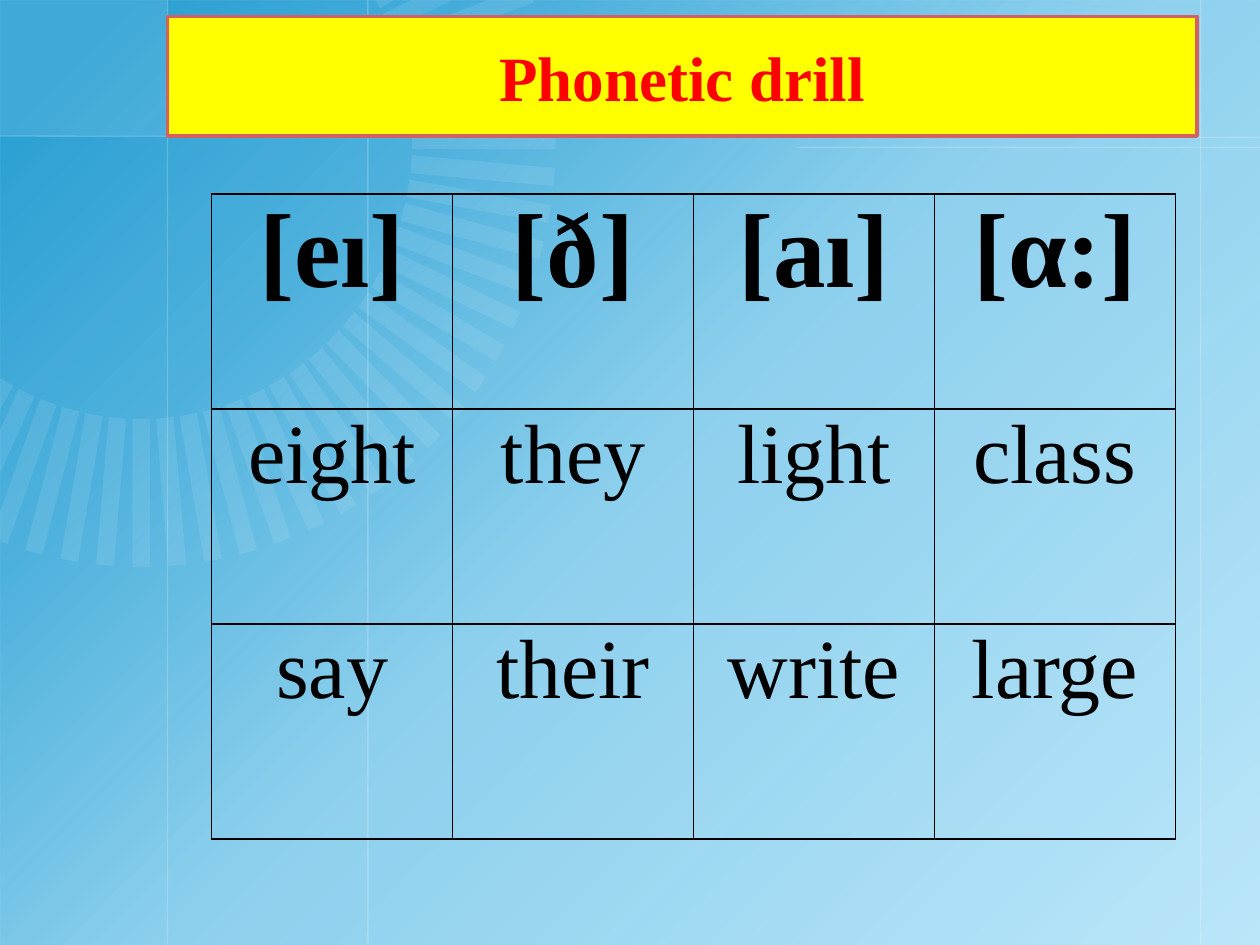
from dataclasses import dataclass
from math import cos, radians, sin

from lxml import etree
from pptx import Presentation
from pptx.dml.color import RGBColor
from pptx.enum.shapes import MSO_CONNECTOR, MSO_SHAPE
from pptx.enum.text import MSO_ANCHOR, MSO_AUTO_SIZE, PP_ALIGN
from pptx.oxml import parse_xml
from pptx.oxml.ns import nsdecls, qn
from pptx.util import Inches, Pt

STRAIGHT = MSO_CONNECTOR.STRAIGHT
RECTANGLE = MSO_SHAPE.RECTANGLE
CENTER = PP_ALIGN.CENTER
MIDDLE = MSO_ANCHOR.MIDDLE
NO_AUTOFIT = MSO_AUTO_SIZE.NONE

WIDTH, HEIGHT = 10, 7.5
FONT = "Times New Roman"
WHITE, BLACK, PALE, BLUE = "FFFFFF", "000000", "F2FAFE", "0F92CC"
GLOW_STOPS = [(6, 83), (26, 63), (50, 27), (100, 0)]  # position, opacity
ROWS = [
    ["[eı]", "[ð]", "[aı]", "[α:]"],
    ["eight", "they", "light", "class"],
    ["say", "their", "write", "large"],
]
Point = tuple[float, float]


@dataclass(frozen=True)
class GuideLine:
    start: Point
    end: Point


@dataclass(frozen=True)
class RayRing:
    """Bars fanned around a centre, slightly taller than wide."""
    center: Point
    inner: float
    outer: float
    half_width: float
    stretch: float


GUIDES = [
    *(GuideLine((x, 0), (x, HEIGHT)) for x in (1.33, 9.53, 2.92)),
    GuideLine((0, 1.08), (WIDTH, 1.09)),
    GuideLine((6.33, 1.17), (WIDTH, 1.17)),
]
RING = RayRing((1.12, 1.11), 2.15, 3.29, 0.07, 1.03)
# The title bar covers the rays between these two runs
RAY_ANGLES = [*range(-30, -19, 5), *range(0, 121, 5)]


def color(value: str) -> RGBColor:
    return RGBColor.from_string(value)


def set_format(target, values: dict) -> None:
    for name, value in values.items():
        setattr(target, name, value)


def style_span(span, size: int, bold: bool, ink: str) -> None:
    set_format(span.font, {"name": FONT, "size": Pt(size), "bold": bold})
    span.font.color.rgb = color(ink)


def set_opacity(shape, percent: int) -> None:
    for tone in shape._element.spPr.iter(qn("a:srgbClr")):
        etree.SubElement(tone, qn("a:alpha"), val=str(percent * 1000))


def style_plain(shape, fill: str, opacity: int) -> None:
    shape.shadow.inherit = False
    shape.fill.solid()
    shape.fill.fore_color.rgb = color(fill)
    shape.line.fill.background()
    set_opacity(shape, opacity)


def add_rectangle(slide, width: float, height: float):
    return slide.shapes.add_shape(
        RECTANGLE, 0, 0, Inches(width), Inches(height))


def add_glow(slide) -> None:
    glow = add_rectangle(slide, WIDTH, HEIGHT)
    glow.shadow.inherit = False
    glow.line.fill.background()
    stops = "".join(
        f'<a:gs pos="{place * 1000}"><a:srgbClr val="{BLUE}">'
        f'<a:alpha val="{opacity * 1000}"/></a:srgbClr></a:gs>'
        for place, opacity in GLOW_STOPS)
    gradient = parse_xml(
        f'<a:gradFill {nsdecls("a")} rotWithShape="1"><a:gsLst>{stops}</a:gsLst>'
        '<a:lin ang="2700000" scaled="0"/></a:gradFill>')
    glow._element.spPr.find(qn("a:prstGeom")).addnext(gradient)


def add_guide(slide, guide: GuideLine) -> None:
    ends = [Inches(value) for value in (*guide.start, *guide.end)]
    line = slide.shapes.add_connector(STRAIGHT, *ends)
    line.line.width = Pt(0.75)
    line.line.color.rgb = color(WHITE)
    etree.SubElement(line._element.spPr, qn("a:effectLst"))
    set_opacity(line, 20)


def clip_at_zero(points: list[Point], axis: int) -> list[Point]:
    """Keep the part of a polygon with no negative value on one axis."""
    kept = []
    for index, end in enumerate(points):
        start = points[index - 1]
        if (start[axis] < 0) != (end[axis] < 0):
            share = start[axis] / (start[axis] - end[axis])
            kept.append(tuple(a + share * (b - a) for a, b in zip(start, end)))
        if end[axis] >= 0:
            kept.append(end)
    return kept


def add_ray(slide, ring: RayRing, degrees: int) -> None:
    across, down = cos(radians(degrees)), sin(radians(degrees))
    corners = [(ring.inner, -1), (ring.outer, -1), (ring.outer, 1), (ring.inner, 1)]
    points = []
    for radius, side in corners:
        offset = side * ring.half_width
        points.append((
            ring.center[0] + radius * across - offset * down,
            ring.center[1] + ring.stretch * (radius * down + offset * across)))
    points = clip_at_zero(clip_at_zero(points, 0), 1)
    places = [(Inches(x), Inches(y)) for x, y in points]
    outline = slide.shapes.build_freeform(*places[0])
    outline.add_line_segments(places[1:], close=True)
    style_plain(outline.convert_to_shape(), PALE, 10)


def style_cell(cell, text: str, size: int, bold: bool) -> None:
    side = Inches(0.07)
    set_format(cell, {"margin_left": side, "margin_right": side,
                      "margin_top": 0, "margin_bottom": 0})
    cell.fill.background()
    para = cell.text_frame.paragraphs[0]
    para.alignment = CENTER
    span = para.add_run()
    span.text = text
    style_span(span, size, bold, BLACK)
    properties = cell._tc.get_or_add_tcPr()
    for index, edge in enumerate(("lnL", "lnR", "lnT", "lnB")):
        properties.insert(index, parse_xml(
            f'<a:{edge} {nsdecls("a")} w="{Pt(1)}"><a:solidFill>'
            f'<a:srgbClr val="{BLACK}"/></a:solidFill></a:{edge}>'))


def add_sound_table(slide) -> None:
    frame = slide.shapes.add_table(
        len(ROWS), len(ROWS[0]),
        Inches(1.68), Inches(1.54), Inches(7.65), Inches(5.12))
    table = frame.table
    set_format(table, {"first_row": False, "horz_banding": False})
    for row_index, words in enumerate(ROWS):
        heading = row_index == 0
        for column_index, word in enumerate(words):
            style_cell(table.cell(row_index, column_index), word,
                       60 if heading else 48, heading)


def place_title(slide) -> None:
    title = slide.shapes.title
    set_format(title, {"left": Inches(1.33), "top": Inches(0.13),
                       "width": Inches(8.17), "height": Inches(0.95)})
    title.fill.solid()
    title.fill.fore_color.rgb = color("FFFF00")
    title.line.color.rgb = color("D36161")
    title.line.width = Pt(2)
    set_format(title.text_frame, {"auto_size": NO_AUTOFIT, "word_wrap": True,
                                  "vertical_anchor": MIDDLE})
    para = title.text_frame.paragraphs[0]
    para.alignment = CENTER
    span = para.add_run()
    span.text = "Phonetic drill"
    style_span(span, 36, True, "FF0000")
    slide.shapes._spTree.append(title._element)  # bring to front


def main() -> None:
    deck = Presentation()
    set_format(deck, {"slide_width": Inches(WIDTH), "slide_height": Inches(HEIGHT)})
    page = deck.slides.add_slide(deck.slide_layouts[5])

    # Backdrop
    page.background.fill.solid()
    page.background.fill.fore_color.rgb = color("BCE7FA")
    add_glow(page)
    style_plain(add_rectangle(page, 1.33, 1.08), WHITE, 10)
    for guide in GUIDES:
        add_guide(page, guide)
    for degrees in RAY_ANGLES:
        add_ray(page, RING, degrees)

    # Content
    add_sound_table(page)
    place_title(page)
    deck.save("out.pptx")


if __name__ == "__main__":
    main()
